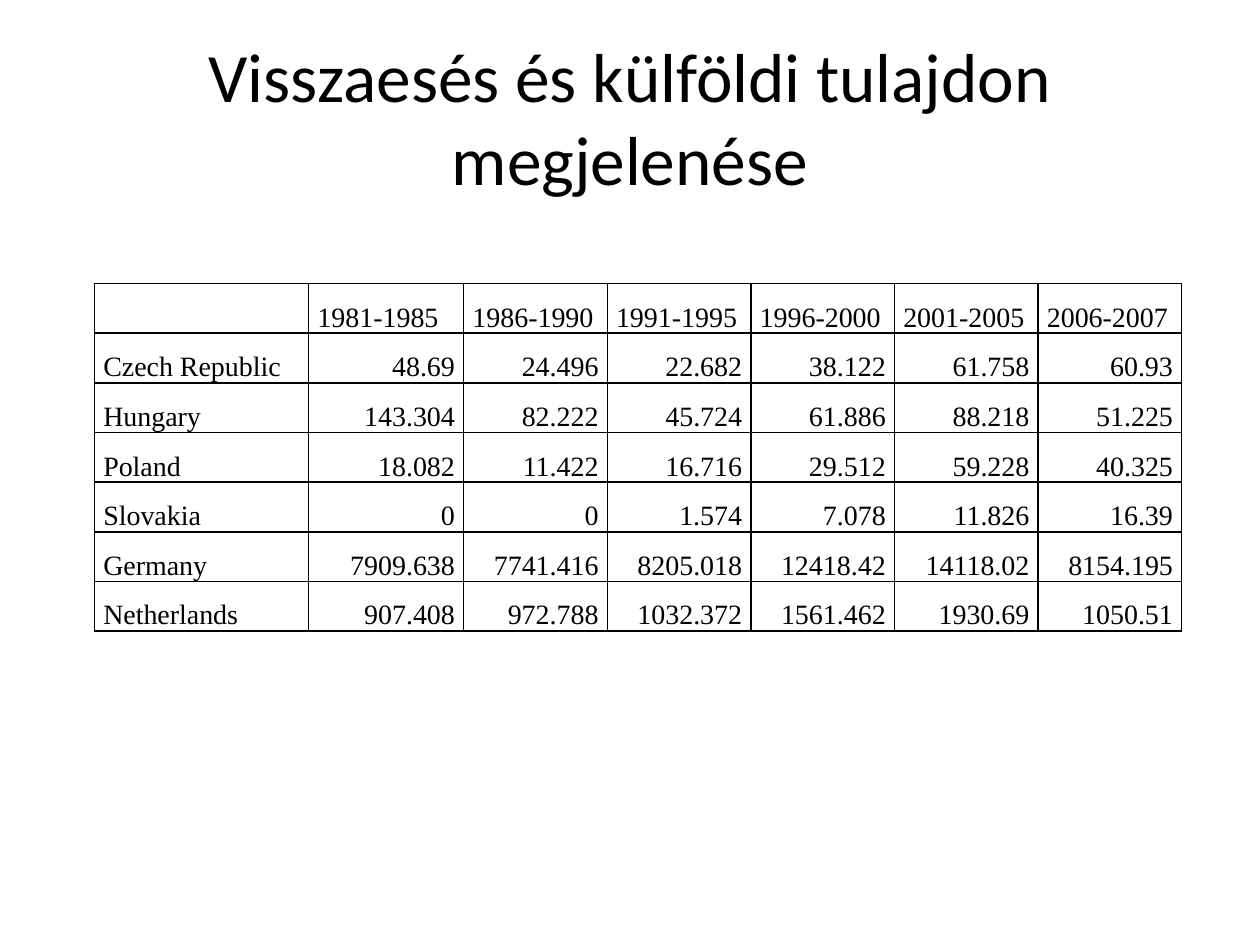
from lxml.etree import SubElement
from pptx import Presentation
from pptx.dml.color import RGBColor
from pptx.enum.text import MSO_ANCHOR as Anchor, PP_ALIGN as Align
from pptx.oxml.ns import qn
from pptx.util import Inches, Pt

BLACK = RGBColor(0, 0, 0)
WHITE = RGBColor(255, 255, 255)

SLIDE_WIDTH, SLIDE_HEIGHT = Inches(10), Inches(7.5)
COLUMN_WIDTHS = [1.7, 1.23] + [1.14] * 5
TABLE_HEIGHT = 2.76

TITLE = "Visszaesés és külföldi tulajdon megjelenése"
TITLE_FONT = {"name": "Calibri", "size": Pt(39.6)}
TABLE_FONT = {"name": "Times New Roman", "size": Pt(16)}
CELL_FORMAT = {
    "margin_left": Inches(0.07),
    "margin_right": Inches(0.07),
    "margin_top": 0,
    "margin_bottom": 0,
    "vertical_anchor": Anchor.BOTTOM,
}

ROWS = [
    ["", "1981-1985", "1986-1990", "1991-1995", "1996-2000", "2001-2005", "2006-2007"],
    ["Czech Republic", "48.69", "24.496", "22.682", "38.122", "61.758", "60.93"],
    ["Hungary", "143.304", "82.222", "45.724", "61.886", "88.218", "51.225"],
    ["Poland", "18.082", "11.422", "16.716", "29.512", "59.228", "40.325"],
    ["Slovakia", "0", "0", "1.574", "7.078", "11.826", "16.39"],
    ["Germany", "7909.638", "7741.416", "8205.018", "12418.42", "14118.02", "8154.195"],
    ["Netherlands", "907.408", "972.788", "1032.372", "1561.462", "1930.69", "1050.51"],
]


def apply_format(target, values):
    for name, value in values.items():
        setattr(target, name, value)


def write_text(para, text, font, align, line_spacing=1.0):
    apply_format(para, {"alignment": align, "line_spacing": line_spacing})
    if text:
        span = para.add_run()
        span.text = text
        apply_format(span.font, font)
        span.font.color.rgb = BLACK


def add_title(page):
    box = page.shapes.add_textbox(
        int(SLIDE_WIDTH * 0.05), int(SLIDE_HEIGHT * 0.04),
        int(SLIDE_WIDTH * 0.9), Inches(1.25))
    frame = box.text_frame
    apply_format(frame, {"word_wrap": True, "vertical_anchor": Anchor.MIDDLE})
    write_text(frame.paragraphs[0], TITLE, TITLE_FONT, Align.CENTER)


def add_borders(cell):
    properties = cell._tc.get_or_add_tcPr()
    for side in ("a:lnL", "a:lnR", "a:lnT", "a:lnB"):
        line = SubElement(properties, qn(side), w=str(Pt(1)))
        fill = SubElement(line, qn("a:solidFill"))
        SubElement(fill, qn("a:srgbClr"), val=str(BLACK))


def fill_cell(cell, text, align):
    apply_format(cell, CELL_FORMAT)
    add_borders(cell)
    cell.fill.solid()
    cell.fill.fore_color.rgb = WHITE
    write_text(cell.text_frame.paragraphs[0], text, TABLE_FONT, align, 1.15)


def add_data_table(page):
    table = page.shapes.add_table(
        len(ROWS), len(COLUMN_WIDTHS),
        int(SLIDE_WIDTH * 0.075), int(SLIDE_HEIGHT * 0.3),
        Inches(sum(COLUMN_WIDTHS)), Inches(TABLE_HEIGHT)).table
    apply_format(table, {"first_row": False, "horz_banding": False})
    for column, width in zip(table.columns, COLUMN_WIDTHS):
        column.width = Inches(width)
    for row_index, values in enumerate(ROWS):
        for column_index, text in enumerate(values):
            is_number = row_index > 0 and column_index > 0
            fill_cell(table.cell(row_index, column_index), text,
                      Align.RIGHT if is_number else Align.LEFT)


def main():
    deck = Presentation()
    apply_format(deck, {"slide_width": SLIDE_WIDTH, "slide_height": SLIDE_HEIGHT})
    page = deck.slides.add_slide(deck.slide_layouts[6])
    add_title(page)
    add_data_table(page)
    deck.save("out.pptx")


if __name__ == "__main__":
    main()
